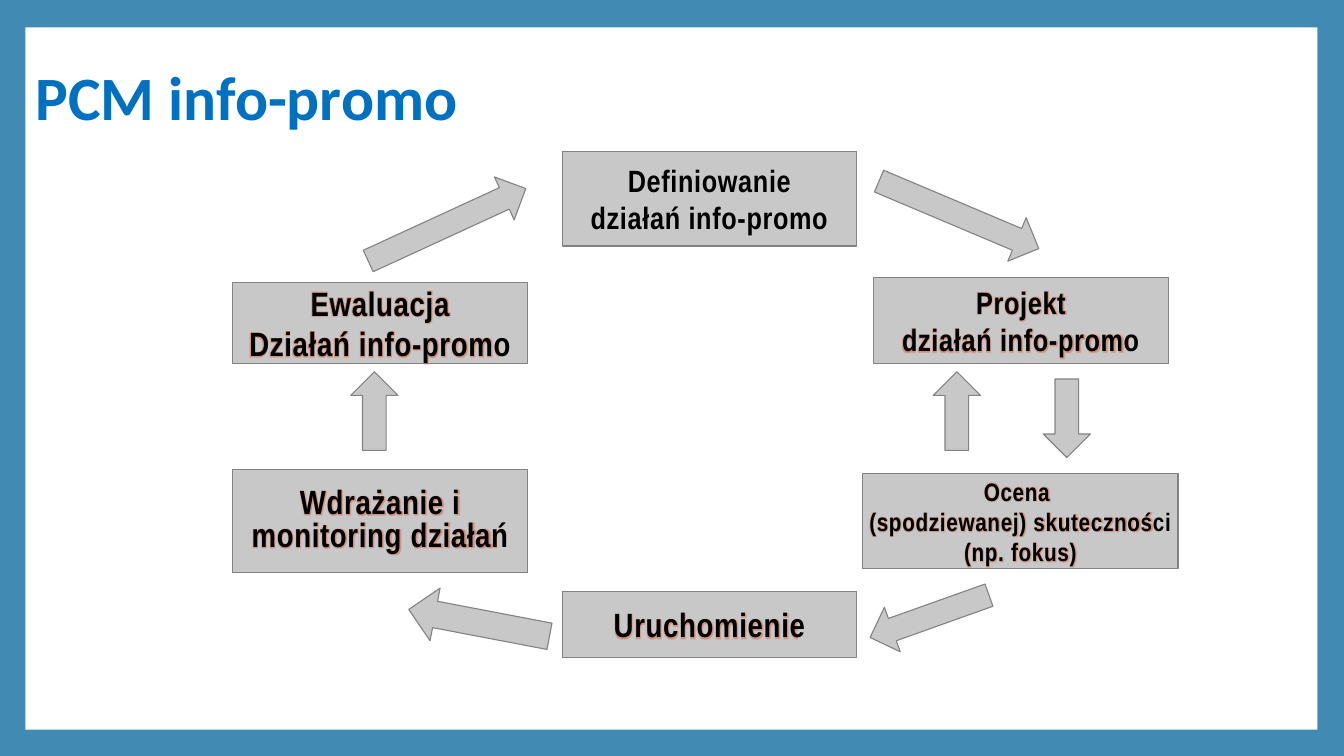
"""Build the PCM info-promo cycle slide."""
from lxml import etree
from pptx import Presentation
from pptx.dml.color import RGBColor
from pptx.enum.shapes import MSO_SHAPE
from pptx.enum.text import MSO_ANCHOR, MSO_AUTO_SIZE, PP_ALIGN
from pptx.oxml.ns import qn
from pptx.util import Cm, Pt

RECT, ARROW = MSO_SHAPE.RECTANGLE, MSO_SHAPE.UP_ARROW
LEFT, CENTER = PP_ALIGN.LEFT, PP_ALIGN.CENTER
MIDDLE, FIXED = MSO_ANCHOR.MIDDLE, MSO_AUTO_SIZE.NONE

INK = {"frame": "418AB3", "panel": "FFFFFF", "box": "C8C8C8", "edge": "838383",
       "text": "000000", "title": "0070C0", "rim": "5E5E5E", "warm": "DB4313",
       "dark": "0D1C24"}

TITLE = "PCM info-promo"
PANEL = (0.64, 0.69, 32.56, 17.7)
HEAD = (0.64, 0.36, 30.43, 4.09)
WIDE = 7.42
SLIM = 1.19

BOXES = [
    ((14.17, 3.81, WIDE, 2.39), 22, 1, [("Definiowanie", "dark"), ("działań info-promo", "dark")]),
    ((5.87, 11.84, WIDE, 2.59), 24, 0.8, [("Wdrażanie i", "warm"), ("monitoring działań", "warm")]),
    ((22.02, 6.99, WIDE, 2.18), 22, 1, [("Projekt", "warm"), ("działań info-promo", "dark")]),
    ((21.74, 11.94, 7.95, 2.39), 18, 1,
     [("Ocena \v(spodziewanej) skuteczności", "warm"), ("(np. fokus)", "warm")]),
    ((14.17, 14.91, WIDE, 1.65), 24, 1, [("Uruchomienie", "warm")]),
    ((5.87, 7.11, WIDE, 2.06), 24, 1, [("Ewaluacja", "warm"), ("Działań info-promo", "warm")]),
]

ARROWS = [
    ((26.29, 9.55, SLIM, 1.98), 180),
    ((23.52, 9.37, SLIM, 1.98), 0),
    ((23.57, 3.23, SLIM, 4.37), 112.9),
    ((10.67, 3.48, SLIM, 4.37), 65.3),
    ((8.84, 9.37, SLIM, 1.98), 0),
    ((11.4, 13.89, 1.35, 3.61), 280.8),
    ((22.83, 13.94, SLIM, 3.18), 250.4),
]


def rgb(name):
    return RGBColor.from_string(INK[name])


def node(host, tag, **attrs):
    return etree.SubElement(host, qn(tag), attrs)


def trim(run, rim, glow, gap):
    props = run.font._element
    line = etree.Element(qn("a:ln"), w="12700")
    tone = node(node(line, "a:solidFill"), "a:srgbClr", val=INK[rim])
    if rim == "dark":
        node(tone, "a:alpha", val="6000")
    props.insert(0, line)
    if glow:
        effect = etree.Element(qn("a:effectLst"))
        halo = node(effect, "a:glow", rad="38100")
        node(node(halo, "a:srgbClr", val=INK["warm"]), "a:alpha", val="40000")
        props.find(qn("a:solidFill")).addnext(effect)
    if gap:
        props.set("spc", str(gap))


def write(shape, lines, size, font, color, align, space=1, glow=False, gap=0, wrap=False):
    frame = shape.text_frame
    frame.auto_size = FIXED
    frame.word_wrap = wrap
    frame.vertical_anchor = MIDDLE
    for i, (text, rim) in enumerate(lines):
        para = frame.add_paragraph() if i else frame.paragraphs[0]
        para.text = text
        para.alignment = align
        para.line_spacing = space
        for run in para.runs:
            run.font.name = font
            run.font.size = Pt(size)
            run.font.bold = True
            run.font.color.rgb = rgb(color)
            trim(run, rim, glow, gap)


def draw(slide, kind, place, fill, edge=None):
    shape = slide.shapes.add_shape(kind, *map(Cm, place))
    shape.shadow.inherit = False
    shape.fill.solid()
    shape.fill.fore_color.rgb = rgb(fill)
    if edge:
        shape.line.color.rgb = rgb(edge)
        shape.line.width = Pt(0.79)
    else:
        shape.line.fill.background()
    return shape


def main():
    deck = Presentation()
    deck.slide_width, deck.slide_height = Cm(33.87), Cm(19.05)
    slide = deck.slides.add_slide(deck.slide_layouts[5])
    slide.background.fill.solid()
    slide.background.fill.fore_color.rgb = rgb("frame")

    last = draw(slide, RECT, PANEL, "panel")
    for place, size, space, lines in BOXES:
        box = draw(slide, RECT, place, "box", "edge")
        write(box, lines, size, "Arial Narrow", "text", CENTER, space=space,
              glow=lines[0][1] == "warm", gap=50)
    for place, turn in ARROWS:
        last = draw(slide, ARROW, place, "box", "edge")
        last.rotation = turn

    title = slide.shapes.title
    title.left, title.top, title.width, title.height = map(Cm, HEAD)
    write(title, [(TITLE, "rim")], 44, "Calibri", "title", LEFT, wrap=True)
    last._element.addnext(title._element)
    deck.save("out.pptx")


if __name__ == "__main__":
    main()
